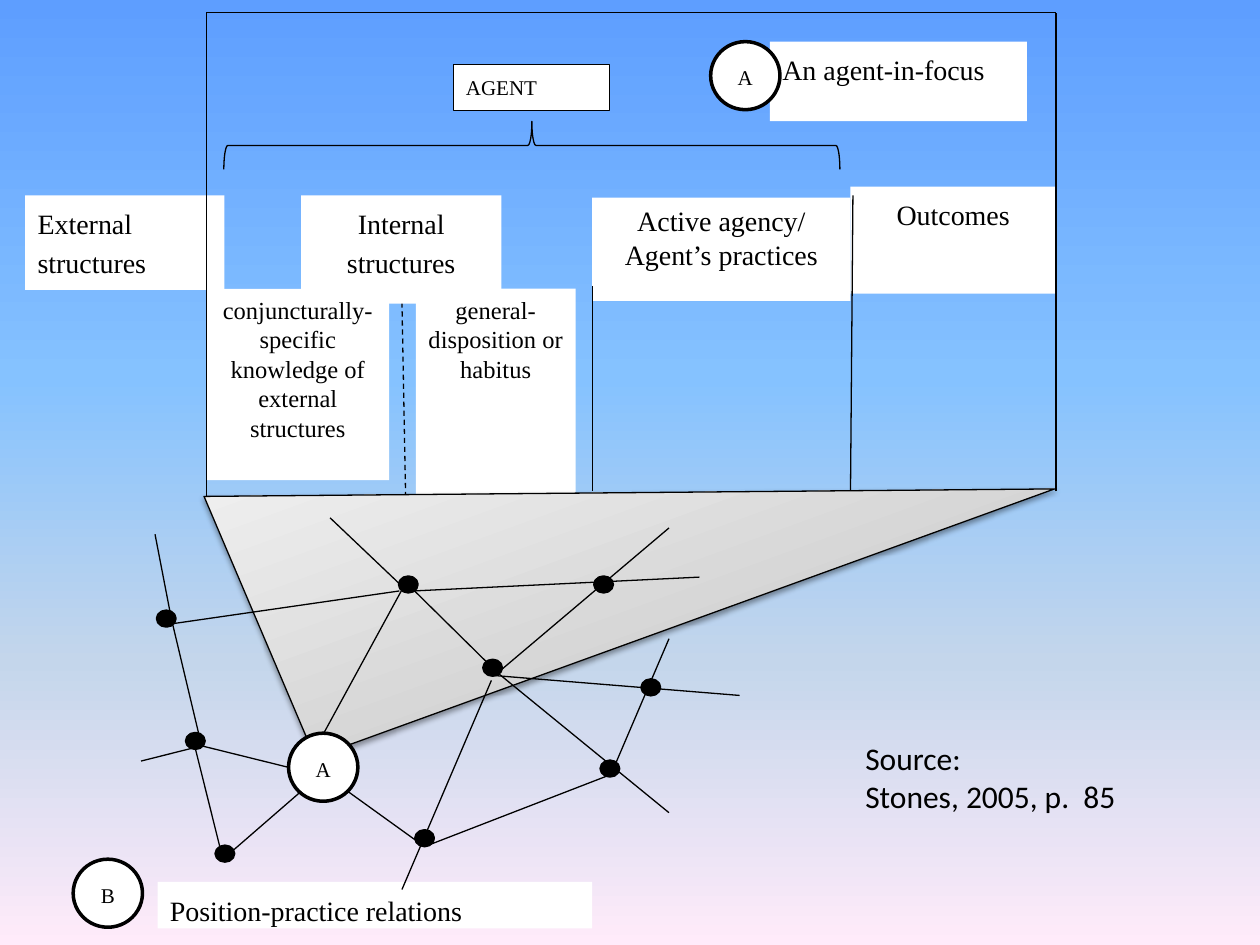
from lxml import etree
from pptx import Presentation
from pptx.dml.color import RGBColor
from pptx.enum.dml import MSO_LINE
from pptx.enum.shapes import MSO_CONNECTOR, MSO_SHAPE
from pptx.enum.text import MSO_ANCHOR, MSO_AUTO_SIZE, PP_ALIGN
from pptx.oxml.ns import qn
from pptx.util import Pt

LEFT, CENTER = PP_ALIGN.LEFT, PP_ALIGN.CENTER
TOP, MIDDLE = MSO_ANCHOR.TOP, MSO_ANCHOR.MIDDLE
RECT, OVAL, BRACE = MSO_SHAPE.RECTANGLE, MSO_SHAPE.OVAL, MSO_SHAPE.LEFT_BRACE
STRAIGHT, DASH = MSO_CONNECTOR.STRAIGHT, MSO_LINE.DASH
FIT_SHAPE = MSO_AUTO_SIZE.SHAPE_TO_FIT_TEXT
SERIF = "Times New Roman"
BLACK, WHITE = "000000", "FFFFFF"

# left, top, width, height, paragraphs, size, alignment, spaced
COLUMN_BOXES = [
    (14.4, 111.6, 113.8, 54, ["External structures"], 16, LEFT, True),
    (172, 111.6, 114.5, 62, ["Internal structures"], 16, CENTER, True),
    (338.4, 113, 147.6, 59, ["Active agency/", "Agent’s practices"], 16, CENTER, False),
    (486, 106.6, 117.4, 61.2, ["Outcomes"], 16, CENTER, True),
    (118, 165, 104.4, 109.4,
     ["conjuncturally-", "specific knowledge of external structures"], 14, CENTER, False),
    (237.6, 165, 91.4, 147, ["general-disposition or habitus"], 14, CENTER, False),
]
COLUMN_LINES = [
    (338.4, 163.4, 338.4, 280.8), (487.4, 111.6, 486, 280.8),
    (118, 113, 118, 284.4), (118, 284.4, 595.4, 280.8),
]
FRAME_LINES = [
    (603.4, 280.8, 603.4, 7.2), (118, 113, 118, 7.2), (118, 7.2, 603.4, 7.2),
]
TRIANGLE = [(180, 432.7), (116.6, 283.7), (602.6, 279.4)]
NETWORK_LINES = [
    (228.2, 337.7, 98.6, 356.4), (97.2, 349.9, 88.6, 305.3),
    (232.6, 337.7, 188.6, 295.9), (98.6, 356.4, 115.2, 426.2),
    (115.2, 426.2, 164.9, 438.5), (185, 419, 229.7, 337),
    (284.4, 384.5, 236.2, 337), (284.4, 384.5, 382.3, 464.4),
    (280.8, 388.8, 229.7, 508.3), (115.2, 426.2, 80.6, 434.9),
    (172.1, 452.2, 127.4, 491), (236.2, 337.7, 399.6, 329.8),
    (284.4, 384.5, 382.3, 301.7), (198.7, 452.2, 242.6, 483.8),
    (111.6, 427.7, 127.4, 491), (280.8, 385.9, 422.6, 397.4),
    (352.1, 435.6, 382.3, 365), (348.5, 442.8, 242.6, 483.8),
]
NODE_CENTERS = [
    (348.5, 439.2), (95, 353.5), (233.3, 334), (281.5, 381.6), (344.9, 334),
    (111.6, 423.4), (242.6, 479), (371.9, 392.8), (128.5, 487.8),
]


def color(value):
    return RGBColor.from_string(value)


def set_gradient(fill, element, stops, angle):
    """Fill with (percent, colour) stops; angle is counter-clockwise."""
    fill.gradient()
    fill.gradient_angle = angle
    stop_list = element.find(".//" + qn("a:gsLst"))
    for old in list(stop_list):
        stop_list.remove(old)
    for percent, value in stops:
        gs = etree.SubElement(stop_list, qn("a:gs"), pos=str(percent * 1000))
        etree.SubElement(gs, qn("a:srgbClr"), val=value)


def set_text(sp, paragraphs, size, align=LEFT, spaced=False, anchor=TOP, font=SERIF):
    tf = sp.text_frame
    tf.word_wrap = True
    tf.vertical_anchor = anchor
    tf.text = "\n".join(paragraphs)
    for p in tf.paragraphs:
        p.alignment = align
        p.font.name, p.font.size = font, Pt(size)
        p.font.color.rgb = color(BLACK)
        if spaced:
            p.line_spacing, p.space_after = 1.15, Pt(10)


def add_shape(slide, kind, left, top, width, height, fill=None, line=None):
    """line is a width in points, or None for no outline."""
    sp = slide.shapes.add_shape(kind, Pt(left), Pt(top), Pt(width), Pt(height))
    sp.shadow.inherit = False
    if fill:
        sp.fill.solid()
        sp.fill.fore_color.rgb = color(fill)
    else:
        sp.fill.background()
    if line:
        sp.line.color.rgb = color(BLACK)
        sp.line.width = Pt(line)
    else:
        sp.line.fill.background()
    return sp


def add_box(slide, left, top, width, height, paragraphs, size, align, spaced, line=None):
    sp = add_shape(slide, RECT, left, top, width, height, WHITE, line)
    set_text(sp, paragraphs, size, align, spaced)


def add_badge(slide, left, top, letter):
    sp = add_shape(slide, OVAL, left, top, 39.6, 38.9, WHITE, 2)
    set_text(sp, [letter], 12, CENTER, True, MIDDLE)


def add_node(slide, x, y, width=10, height=8.5):
    add_shape(slide, OVAL, x - width / 2, y - height / 2, width, height, BLACK, 2)


def add_line(slide, x1, y1, x2, y2, dash=None):
    cn = slide.shapes.add_connector(STRAIGHT, Pt(x1), Pt(y1), Pt(x2), Pt(y2))
    cn.line.color.rgb = color(BLACK)
    cn.line.width = Pt(0.75)
    if dash:
        cn.line.dash_style = dash
    etree.SubElement(cn._element.spPr, qn("a:effectLst"))


def add_triangle(slide):
    points = [(Pt(x), Pt(y)) for x, y in TRIANGLE]
    builder = slide.shapes.build_freeform(*points[0])
    builder.add_line_segments(points[1:], close=True)
    sp = builder.convert_to_shape()
    set_gradient(sp.fill, sp._element,
                 [(0, "BDBDBD"), (35, "D1D1D1"), (100, "EEEEEE")], 110)
    sp.line.color.rgb = color(BLACK)
    sp.line.width = Pt(0.75)
    sp.shadow.inherit = False
    effects = sp._element.spPr.find(qn("a:effectLst"))
    shadow = etree.SubElement(effects, qn("a:outerShdw"), blurRad=str(Pt(3.1)),
                              dist=str(Pt(1.6)), dir="5400000", rotWithShape="0")
    clr = etree.SubElement(shadow, qn("a:srgbClr"), val=BLACK)
    etree.SubElement(clr, qn("a:alpha"), val="38000")


def add_source(slide):
    sp = slide.shapes.add_textbox(Pt(487.4), Pt(419), Pt(201.6), Pt(51))
    set_text(sp, ["Source:", "Stones, 2005, p.  85"], 18, font="Calibri")
    sp.text_frame.auto_size = FIT_SHAPE


def main():
    prs = Presentation()
    prs.slide_width, prs.slide_height = Pt(720), Pt(540)
    slide = prs.slides.add_slide(prs.slide_layouts[6])
    set_gradient(slide.background.fill, slide._element,
                 [(0, "5E9EFF"), (40, "85C2FF"), (70, "C4D6EB"), (100, "FFEBFA")], 270)

    add_line(slide, 229.7, 172.8, 231.8, 284.4, DASH)
    for box in COLUMN_BOXES:
        add_box(slide, *box)
    for line in COLUMN_LINES:
        add_line(slide, *line)
    brace = add_shape(slide, BRACE, 290.2, -92.9, 27.4, 352, line=0.75)
    brace.rotation = 90
    add_box(slide, 259.2, 36.7, 89.3, 26.6, ["AGENT"], 12, LEFT, True, 0.5)

    # The two slanted sides first, then the triangle over them
    add_line(slide, 117.4, 284.4, 222.5, 399.6)
    add_line(slide, 222.5, 399.6, 595.4, 280.8)
    add_triangle(slide)

    add_badge(slide, 164.9, 419, "A")
    add_badge(slide, 41.8, 491, "B")
    add_box(slide, 90, 504, 248.4, 26.6, ["Position-practice relations"], 16, LEFT, True)
    for line in NETWORK_LINES:
        add_line(slide, *line)
    for center in NODE_CENTERS:
        add_node(slide, *center)

    add_box(slide, 440, 23.8, 146.9, 45.4, ["An agent-in-focus"], 16, LEFT, True)
    add_badge(slide, 406.1, 23.8, "A")
    for line in FRAME_LINES:
        add_line(slide, *line)
    add_source(slide)
    prs.save("out.pptx")


if __name__ == "__main__":
    main()
